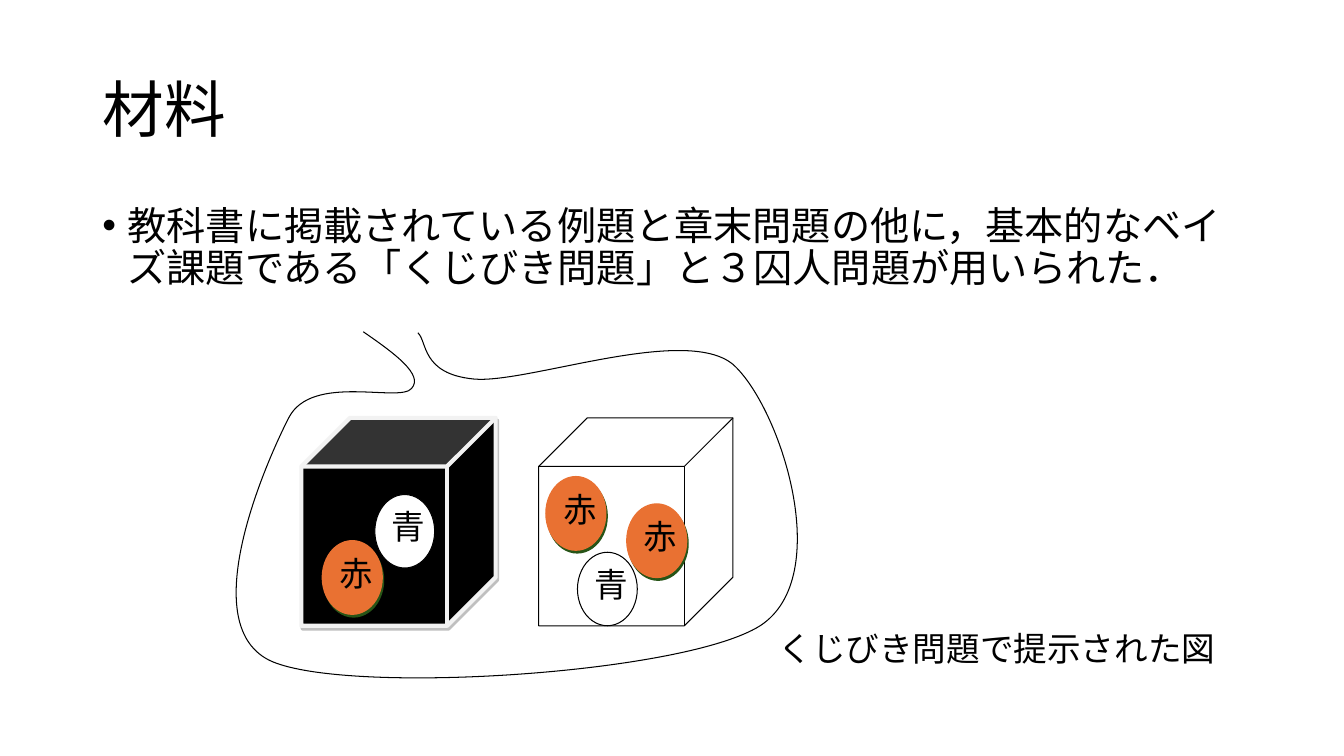
from lxml import etree
from pptx import Presentation
from pptx import util as u
from pptx.dml import color
from pptx.enum import shapes, text
from pptx.oxml import ns

PX = 9525  # EMU per px, 96 px to the inch
SANS, SERIF = "Noto Sans CJK JP", "Cambria"
C = {"ink": "000000", "white": "FFFFFF", "edge": "F2F2F2",
     "red": "E97132", "red_shadow": "275417", "grey_shadow": "808080"}


def px(*lengths):
    return [u.Emu(n * PX) for n in lengths]


def rgb(name):
    return color.RGBColor.from_string(C[name])


def place(sp, box):
    sp.left, sp.top, sp.width, sp.height = px(*box)


def add_run(p, words, size, font=SANS):
    r = p.add_run()
    r.text = words
    r.font.size, r.font.name = u.Pt(size), font
    r.font.color.rgb = rgb("ink")
    ea = etree.SubElement(r.font._element, ns.qn("a:ea"))
    ea.set("typeface", SANS)


def paint(sp, fill, line, width, shadow=None, alpha=100):
    if fill:
        sp.fill.solid()
        sp.fill.fore_color.rgb = rgb(fill)
    else:
        sp.fill.background()
    sp.line.color.rgb = rgb(line)
    sp.line.width = u.Pt(width)
    sp.shadow.inherit = False
    if shadow:
        effects = sp._element.spPr.find(ns.qn("a:effectLst"))
        outer = etree.SubElement(effects, ns.qn("a:outerShdw"), dist=str(u.Pt(2.2)),
                                 dir=str(63 * 60000), algn="ctr", rotWithShape="0")
        clr = etree.SubElement(outer, ns.qn("a:srgbClr"), val=C[shadow])
        etree.SubElement(clr, ns.qn("a:alpha"), val=str(alpha * 1000))


# Title and bullet list
def add_title(s, box, words):
    place(s.shapes.title, box)
    tf = s.shapes.title.text_frame
    tf.vertical_anchor = text.MSO_ANCHOR.MIDDLE
    tf.auto_size = text.MSO_AUTO_SIZE.NONE
    p = tf.paragraphs[0]
    p.alignment, p.line_spacing = text.PP_ALIGN.LEFT, 0.9
    add_run(p, words, 44)


def add_body(s, box, words):
    sp = s.placeholders[1]
    place(sp, box)
    tf = sp.text_frame
    tf.auto_size = text.MSO_AUTO_SIZE.NONE
    p = tf.paragraphs[0]
    p.line_spacing, p.space_before = 0.9, u.Pt(10)
    pPr = p._p.get_or_add_pPr()
    pPr.set("marL", str(24 * PX))
    pPr.set("indent", str(-24 * PX))
    add_run(p, words, 28)


# Boxes and balls
def add_cube(grp, left, top, dark):
    sp = grp.shapes.add_shape(shapes.MSO_SHAPE.CUBE, *px(left, top, 185, 198))
    sp.adjustments[0] = 0.25
    if dark:
        paint(sp, "ink", "edge", 3, "grey_shadow", 50)
    else:
        paint(sp, None, "ink", 0.75)


def add_ball(grp, left, top, word):
    sp = grp.shapes.add_shape(shapes.MSO_SHAPE.OVAL, *px(left, top, 57, 70))
    if word == "赤":
        paint(sp, "red", "red", 1, "red_shadow")
    else:
        paint(sp, "white", "ink", 0.75)
    tf = sp.text_frame
    tf.vertical_anchor = text.MSO_ANCHOR.TOP
    tf.margin_left, tf.margin_top, tf.margin_right, tf.margin_bottom = px(8, 1, 8, 1)
    p = tf.paragraphs[0]
    p.alignment = text.PP_ALIGN.JUSTIFY
    add_run(p, word, 24, SERIF)


# Bag outline: every three points after the first make one cubic curve
def add_bag(grp, left, top):
    points = [(162, 7), (191, 27), (220, 48), (208, 61),
              (197, 75), (113, 46), (91, 89), (69, 132), (0, 288), (75, 321),
              (150, 353), (467, 333), (540, 287), (612, 240), (559, 78), (514, 38),
              (468, 0), (317, 57), (267, 52), (217, 47), (223, 16), (214, 8)]
    fb = grp.shapes.build_freeform(*points[0], scale=PX)
    fb.add_line_segments(points[1:], close=False)
    sp = fb.convert_to_shape(*px(left, top))
    outline = next(sp._element.iter(ns.qn("a:path")))
    segments = outline.findall(ns.qn("a:lnTo"))
    for i in range(0, len(segments), 3):
        curve = etree.SubElement(outline, ns.qn("a:cubicBezTo"))
        for segment in segments[i:i + 3]:
            curve.append(segment[0])
            outline.remove(segment)
    paint(sp, None, "ink", 0.75)


def add_lottery(s, left, top):
    grp = s.shapes.add_group_shape()
    for x, dark in ((103, True), (329, False)):
        add_cube(grp, left + x, top + 89, dark)
    for x, y, word in ((123, 206, "赤"), (173, 162, "青"), (336, 145, "赤"),
                       (413, 171, "赤"), (366, 217, "青")):
        add_ball(grp, left + x, top + y, word)
    add_bag(grp, left, top)


def add_caption(s, box, words):
    tf = s.shapes.add_textbox(*px(*box)).text_frame
    tf.word_wrap = False
    tf.auto_size = text.MSO_AUTO_SIZE.SHAPE_TO_FIT_TEXT
    add_run(tf.paragraphs[0], words, 24)


def main():
    prs = Presentation()
    prs.slide_width, prs.slide_height = px(1280, 720)
    s = prs.slides.add_slide(prs.slide_layouts[1])
    add_title(s, (88, 38, 1104, 139), "材料")
    add_body(s, (88, 192, 1104, 457),
             "教科書に掲載されている例題と章末問題の他に，基本的なベイズ課題である"
             "「くじびき問題」と３囚人問題が用いられた．")
    add_lottery(s, 184, 309)
    add_caption(s, (732, 593, 440, 48), "くじびき問題で提示された図")
    prs.save("out.pptx")


if __name__ == "__main__":
    main()
